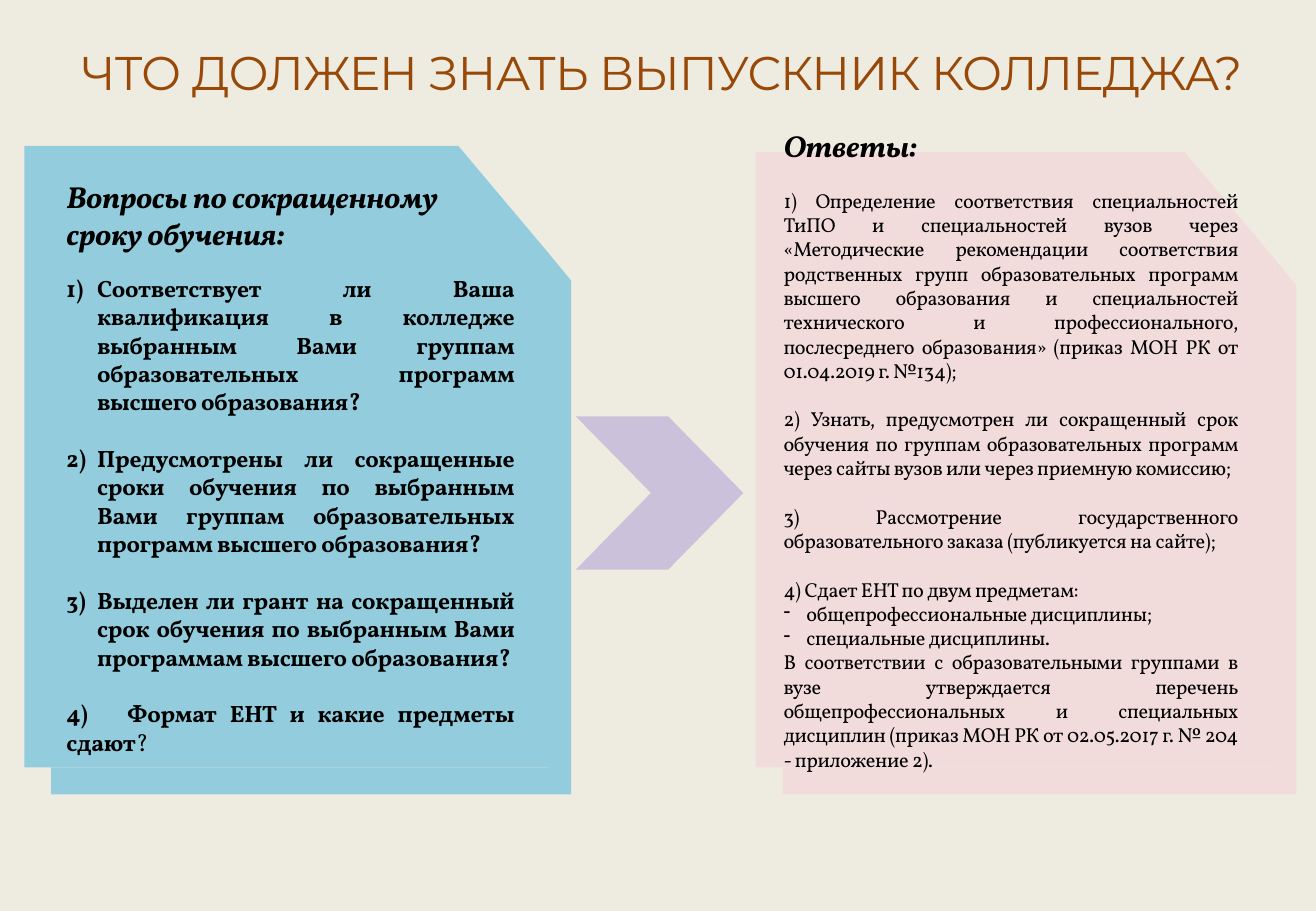
from dataclasses import dataclass, field

import pptx
import pptx.dml.color
import pptx.enum.shapes
import pptx.enum.text
import pptx.oxml.ns
import pptx.shapes.base
import pptx.slide
import pptx.text.text
import pptx.util
from lxml import etree

Cm = pptx.util.Cm
Pt = pptx.util.Pt
Align = pptx.enum.text.PP_ALIGN


@dataclass(frozen=True)
class Theme:
    background: str = "EEECE1"
    title: str = "984807"
    text: str = "000000"
    questions: str = "93CDDD"
    answers: str = "F2DCDB"
    arrow: str = "CCC1DA"
    title_font: str = "Montserrat"
    body_font: str = "Vollkorn"
    title_size: float = 28
    heading_size: float = 18
    question_size: float = 14
    answer_size: float = 12


THEME = Theme()


@dataclass(frozen=True)
class Box:
    left: float
    top: float
    width: float
    height: float


@dataclass(frozen=True)
class Style:
    size: float
    color: str = THEME.text
    font: str = THEME.body_font
    bold: bool = False
    italic: bool = False
    spacing: float = -0.2


@dataclass(frozen=True)
class Item:
    words: str
    style: Style
    gap: float = 0
    indent: float = 0
    bullet: dict[str, dict[str, str]] = field(default_factory=dict)
    tab: float = 0
    align: Align = Align.JUSTIFY
    light_ending: str = ""


@dataclass(frozen=True)
class Panel:
    color: str
    sheet: Box
    fold_width: float
    fold_height: float
    text_box: Box
    items: list[Item]


HEADING = Style(THEME.heading_size, bold=True, italic=True)
QUESTION = Style(THEME.question_size, bold=True)
ANSWER = Style(THEME.answer_size)
NUMBER = {"buFont": {"typeface": "+mj-lt"}, "buAutoNum": {"type": "arabicParenR"}}
DASH = {"buFontTx": {}, "buChar": {"char": "-"}}
LIP_SIDE, LIP_BOTTOM = 0.46, 0.56


def question(words: str, gap: float = 16.8) -> Item:
    return Item(words, QUESTION, gap, indent=0.64, bullet=NUMBER)


def answer(words: str, gap: float = 14.4) -> Item:
    return Item(words, ANSWER, gap)


def subject(words: str) -> Item:
    return Item(words, ANSWER, indent=0.48, bullet=DASH)


PANELS = [
    Panel(THEME.questions, Box(0.51, 3.05, 10.97, 13), 1.9, 2.26, Box(1.14, 3.61, 9.86, 13.03), [
        Item("Вопросы по сокращенному сроку обучения:", HEADING, align=Align.LEFT),
        question("Соответствует ли Ваша квалификация в колледже выбранным Вами группам "
                 "образовательных программ высшего образования?", gap=13.2),
        question("Предусмотрены ли сокращенные сроки обучения по выбранным Вами группам "
                 "образовательных программ высшего образования?"),
        question("Выделен ли грант на сокращенный срок обучения по выбранным Вами "
                 "программам высшего образования?"),
        Item("4)\tФормат ЕНТ и какие предметы сдают", QUESTION, 16.8, tab=1.09, light_ending="?"),
    ]),
    Panel(THEME.answers, Box(15.8, 3.18, 10.84, 12.87), 1.87, 2.23, Box(16.13, 2.54, 10.01, 14.35), [
        Item("Ответы:", HEADING, align=Align.LEFT),
        answer("1) Определение соответствия специальностей ТиПО и специальностей вузов через "
               "«Методические рекомендации соответствия родственных групп образовательных программ "
               "высшего образования и специальностей технического и профессионального, "
               "послесреднего образования» (приказ МОН РК от 01.04.2019 г. №134);"),
        answer("2) Узнать, предусмотрен ли сокращенный срок обучения по группам образовательных "
               "программ через сайты вузов или через приемную комиссию;"),
        answer("3) Рассмотрение государственного образовательного заказа (публикуется на сайте);"),
        answer("4) Сдает ЕНТ по двум предметам:"),
        subject("общепрофессиональные дисциплины;"),
        subject("специальные дисциплины."),
        answer("В соответствии с образовательными группами в вузе утверждается перечень "
               "общепрофессиональных и специальных дисциплин (приказ МОН РК от 02.05.2017 г. "
               "№ 204 - приложение 2).", gap=0),
    ]),
]


def rgb(color: str) -> pptx.dml.color.RGBColor:
    return pptx.dml.color.RGBColor.from_string(color)


def lengths(box: Box) -> list[int]:
    return [Cm(value) for value in (box.left, box.top, box.width, box.height)]


def paint(shape: pptx.shapes.base.BaseShape, color: str) -> None:
    shape.shadow.inherit = False
    shape.fill.solid()
    shape.fill.fore_color.rgb = rgb(color)
    shape.line.fill.background()


def add_run(paragraph: pptx.text.text._Paragraph, words: str, style: Style, bold: bool) -> None:
    run = paragraph.add_run()
    run.text = words
    font = run.font
    font.name, font.size = style.font, Pt(style.size)
    font.bold, font.italic = bold, style.italic
    font.color.rgb = rgb(style.color)
    run._r.get_or_add_rPr().set("spc", str(round(style.spacing * 100)))


def add_element(parent: etree._Element, tag: str, attributes: dict[str, str]) -> etree._Element:
    return etree.SubElement(parent, pptx.oxml.ns.qn(f"a:{tag}"), attributes)


def write_item(paragraph: pptx.text.text._Paragraph, item: Item) -> None:
    paragraph.alignment = item.align
    paragraph.space_before = Pt(item.gap)
    properties = paragraph._p.get_or_add_pPr()
    properties.set("marL", str(Cm(item.indent)))
    properties.set("indent", str(-Cm(item.indent)))
    for tag, attributes in item.bullet.items():
        add_element(properties, tag, attributes)
    if item.tab:
        stops = add_element(properties, "tabLst", {})
        add_element(stops, "tab", {"pos": str(Cm(item.tab)), "algn": "l"})
    add_run(paragraph, item.words, item.style, item.style.bold)
    if item.light_ending:
        add_run(paragraph, item.light_ending, item.style, False)


def add_outline(slide: pptx.slide.Slide, points: list[tuple[float, float]], color: str) -> None:
    start, *rest = [(Cm(x), Cm(y)) for x, y in points]
    builder = slide.shapes.build_freeform(*start)
    builder.add_line_segments(rest, close=True)
    paint(builder.convert_to_shape(), color)


def add_panel(slide: pptx.slide.Slide, panel: Panel) -> None:
    """Draw a sheet with a cut corner, the lip of the sheet behind it, and its text."""
    left, top = panel.sheet.left, panel.sheet.top
    right, bottom = left + panel.sheet.width, top + panel.sheet.height
    cut = top + panel.fold_height
    lip_right, lip_bottom = right + LIP_SIDE, bottom + LIP_BOTTOM
    lip_left = left + LIP_BOTTOM
    add_outline(slide, [(lip_left, bottom), (lip_left, lip_bottom), (lip_right, lip_bottom),
                        (lip_right, cut + LIP_BOTTOM), (right, cut), (right, bottom)], panel.color)
    add_outline(slide, [(left, top), (right - panel.fold_width, top), (right, cut),
                        (right, bottom), (left, bottom)], panel.color)
    frame = slide.shapes.add_textbox(*lengths(panel.text_box)).text_frame
    frame.word_wrap = True
    frame.auto_size = pptx.enum.text.MSO_AUTO_SIZE.SHAPE_TO_FIT_TEXT
    for index, item in enumerate(panel.items):
        write_item(frame.add_paragraph() if index else frame.paragraphs[0], item)


def add_title(slide: pptx.slide.Slide) -> None:
    title = slide.shapes.title
    title.left, title.top, title.width, title.height = lengths(Box(0.28, 0.41, 27.1, 1.52))
    frame = title.text_frame
    frame.margin_left = frame.margin_top = frame.margin_right = frame.margin_bottom = 0
    frame.vertical_anchor = pptx.enum.text.MSO_ANCHOR.TOP
    frame.auto_size = pptx.enum.text.MSO_AUTO_SIZE.SHAPE_TO_FIT_TEXT
    frame.paragraphs[0].line_spacing = Pt(47.6)
    style = Style(THEME.title_size, THEME.title, THEME.title_font, spacing=-0.5)
    write_item(frame.paragraphs[0],
               Item("ЧТО ДОЛЖЕН ЗНАТЬ ВЫПУСКНИК КОЛЛЕДЖА?", style, align=Align.CENTER))


def main() -> None:
    deck = pptx.Presentation()
    deck.slide_width, deck.slide_height = Cm(27.51), Cm(19.05)
    slide = deck.slides.add_slide(deck.slide_layouts[5])
    slide.background.fill.solid()
    slide.background.fill.fore_color.rgb = rgb(THEME.background)
    add_title(slide)
    for panel in PANELS:
        add_panel(slide, panel)
    arrow = slide.shapes.add_shape(pptx.enum.shapes.MSO_SHAPE.CHEVRON,
                                   *lengths(Box(12.04, 8.71, 3.5, 3.2)))
    arrow.adjustments[0] = 0.49
    paint(arrow, THEME.arrow)
    deck.save("out.pptx")


if __name__ == "__main__":
    main()
